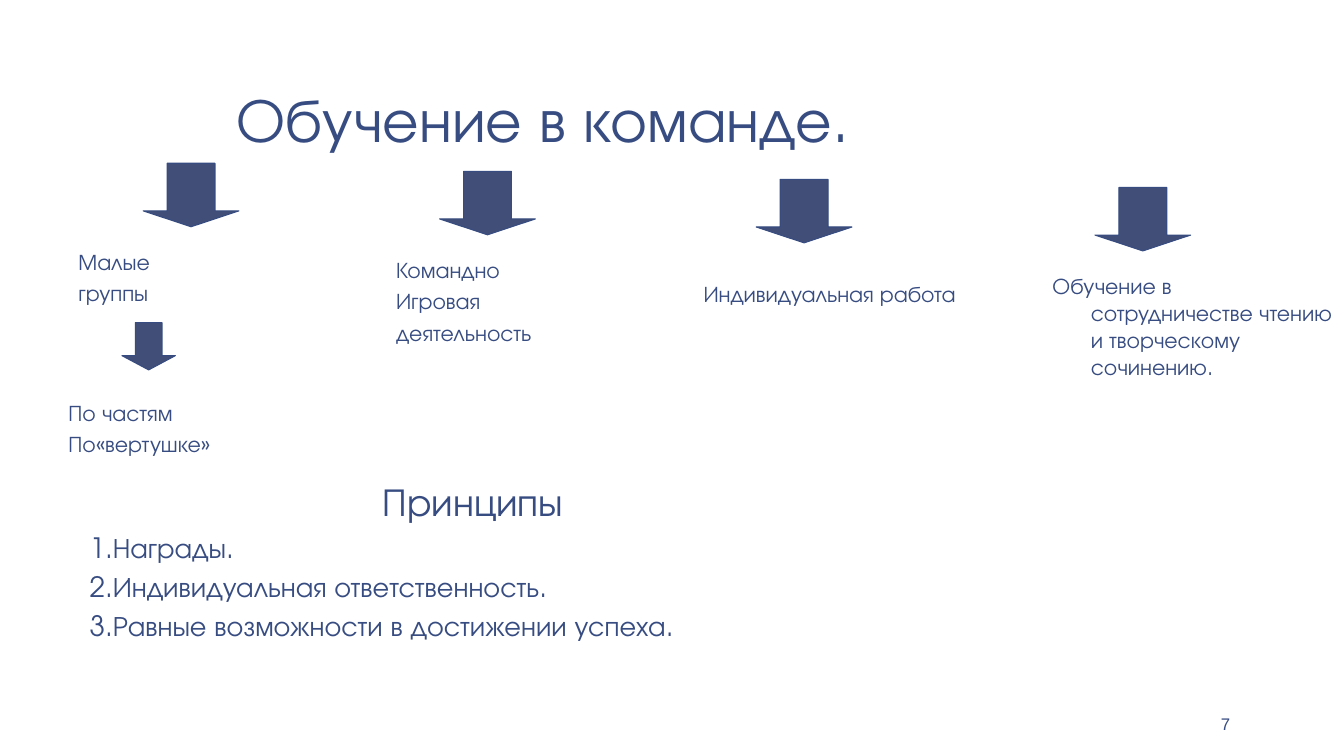
from dataclasses import dataclass

from pptx import Presentation
from pptx import util as u
from pptx.dml.color import RGBColor
from pptx.enum import shapes, text


@dataclass(frozen=True)
class Theme:
    ink: RGBColor = RGBColor(0x37, 0x4C, 0x81)
    arrow: RGBColor = RGBColor(0x41, 0x4E, 0x77)
    paper: RGBColor = RGBColor(0xFF, 0xFF, 0xFF)
    font: str = "TeX Gyre Adventor"
    number_font: str = "Arial"
    title: int = 44
    heading: int = 28
    principle: int = 20
    label: int = 16
    number: int = 12


theme = Theme()
deck = Presentation()
deck.slide_width, deck.slide_height = u.Inches(13.33), u.Inches(7.5)
page = deck.slides.add_slide(deck.slide_layouts[6])
page.background.fill.solid()
page.background.fill.fore_color.rgb = theme.paper


def add_text(place, lines, margin=(0.1, 0.05), font=theme.font, hanging=0.38):
    """Add a text box; each line is (wording, size, left indent of the first line)."""
    box = page.shapes.add_textbox(*map(u.Inches, place))
    frame = box.text_frame
    frame.word_wrap = True
    frame.margin_left = frame.margin_right = u.Inches(margin[0])
    frame.margin_top = frame.margin_bottom = u.Inches(margin[1])
    for index, (wording, size, start) in enumerate(lines):
        para = frame.paragraphs[0] if index == 0 else frame.add_paragraph()
        properties = para._p.get_or_add_pPr()
        properties.set("marL", str(u.Inches(start + hanging)))
        properties.set("indent", str(u.Inches(-hanging)))
        para.space_before = u.Pt(size * 0.2 if index else 0)
        span = para.add_run()
        span.text = wording
        span.font.name = font
        span.font.size = u.Pt(size)
        span.font.color.rgb = theme.ink
    return frame


def add_arrow(place, head):
    arrow = page.shapes.add_shape(shapes.MSO_SHAPE.DOWN_ARROW, *map(u.Inches, place))
    arrow.adjustments[0], arrow.adjustments[1] = 0.5, head
    arrow.shadow.inherit = False
    arrow.fill.solid()
    arrow.fill.fore_color.rgb = theme.arrow
    arrow.line.color.rgb = theme.ink
    arrow.line.width = u.Pt(0.75)


title = add_text((1.22, 0.08, 11.11, 1.53), [("Обучение в команде.", theme.title, 1.0)],
                 margin=(0.13, 0.07), hanging=0)
title.vertical_anchor = text.MSO_ANCHOR.BOTTOM
title.paragraphs[0].line_spacing = 0.85

# Each form of team learning: arrow left, label place, label lines
forms = [
    (1.42, (0.68, 2.41, 1.99, 1.18), ["Малые", "группы"]),
    (4.36, (3.83, 2.49, 2.31, 1.57), ["Командно", "Игровая", "деятельность"]),
    (7.5, (6.88, 2.73, 2.94, 1.57), ["Индивидуальная работа"]),
    (10.86, (10.34, 2.65, 2.99, 1.57),
     ["Обучение в сотрудничестве чтению и творческому сочинению."]),
]
for step, (left, place, lines) in enumerate(forms):
    add_arrow((left, 1.62 + 0.08 * step, 0.95, 0.63), 0.25)
    add_text(place, [(line, theme.label, 0) for line in lines])

add_arrow((1.21, 3.2, 0.53, 0.47), 0.3)
add_text((0.58, 3.91, 2.31, 0.94),
         [(line, theme.label, 0) for line in ("По частям", "По«вертушке»")])

principles = ["1.Награды.", "2.Индивидуальная ответственность.",
              "3.Равные возможности в достижении успеха."]
add_text((0.79, 4.69, 11.76, 2.05),
         [("Принципы", theme.heading, 2.91)]
         + [(line, theme.principle, 0) for line in principles])

number = add_text((11.12, 7, 1.21, 0.35), [("7", theme.number, 0)],
                  margin=(0.13, 0.07), font=theme.number_font, hanging=0)
number.vertical_anchor = text.MSO_ANCHOR.BOTTOM
number.paragraphs[0].alignment = text.PP_ALIGN.RIGHT

deck.save("out.pptx")
